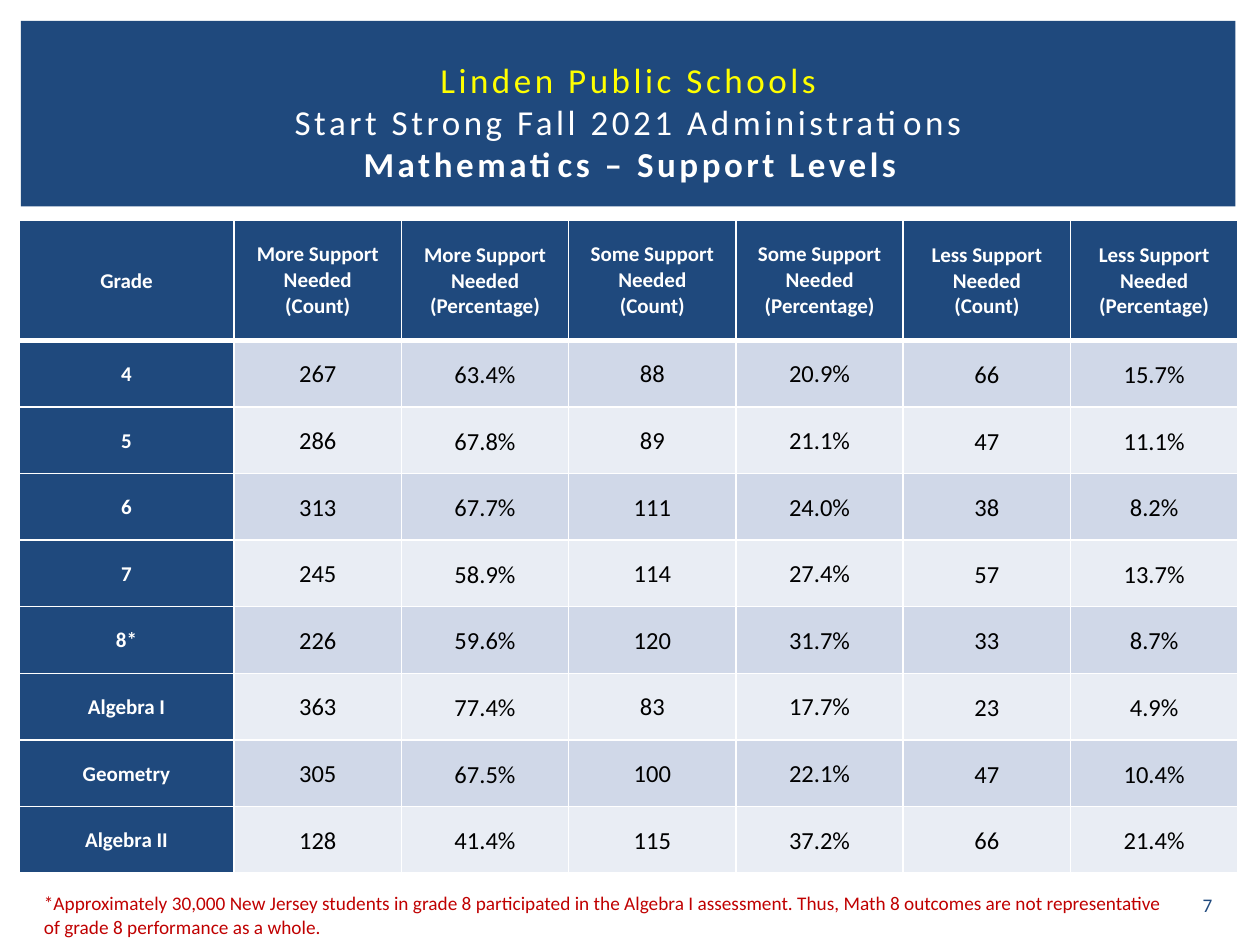
from lxml.etree import SubElement
from pptx import Presentation
from pptx.dml.color import RGBColor
from pptx.enum.shapes import MSO_SHAPE
from pptx.enum.text import MSO_ANCHOR, PP_ALIGN
from pptx.oxml.ns import qn
from pptx.util import Pt

NAVY = RGBColor(0x1F, 0x49, 0x7D)
YELLOW = RGBColor(0xFF, 0xFF, 0x00)
WHITE = RGBColor(0xFF, 0xFF, 0xFF)
BLACK = RGBColor(0x00, 0x00, 0x00)
RED = RGBColor(0xC0, 0x00, 0x00)
BANDS = (RGBColor(0xD0, 0xD8, 0xE8), RGBColor(0xE9, 0xED, 0xF4))

HEADERS = ["Grade"] + [
    f"{level} Support Needed\n({measure})"
    for level in ("More", "Some", "Less")
    for measure in ("Count", "Percentage")
]
RESULTS = [
    ("4", "267", "63.4%", "88", "20.9%", "66", "15.7%"),
    ("5", "286", "67.8%", "89", "21.1%", "47", "11.1%"),
    ("6", "313", "67.7%", "111", "24.0%", "38", "8.2%"),
    ("7", "245", "58.9%", "114", "27.4%", "57", "13.7%"),
    ("8*", "226", "59.6%", "120", "31.7%", "33", "8.7%"),
    ("Algebra I", "363", "77.4%", "83", "17.7%", "23", "4.9%"),
    ("Geometry", "305", "67.5%", "100", "22.1%", "47", "10.4%"),
    ("Algebra II", "128", "41.4%", "115", "37.2%", "66", "21.4%"),
]
WIDE_INSETS = (3.6, 2.16, 3.6, 2.16)
TIGHT_INSETS = (0.72, 0.72, 0.72, 0)
TIGHT_COLUMNS = (2, 5, 6)
FOOTNOTE = (
    "*Approximately 30,000 New Jersey students in grade 8 participated in the "
    "Algebra I assessment. Thus, Math 8 outcomes are not representative of "
    "grade 8 performance as a whole."
)


class SlideBuilder:
    """Draws the elements of one slide in a shared style."""

    font = "Calibri"

    def __init__(self, slide):
        self.slide = slide

    def style(self, r, size, color, bold=False):
        r.font.name = self.font
        r.font.size = Pt(size)
        r.font.bold = bold
        r.font.color.rgb = color

    def banner(self, *box):
        sp = self.slide.shapes.add_shape(MSO_SHAPE.RECTANGLE, *map(Pt, box))
        sp.shadow.inherit = False
        sp.fill.solid()
        sp.fill.fore_color.rgb = NAVY
        sp.line.fill.background()

    def text(self, box, text, size, color, align=PP_ALIGN.LEFT, anchor=MSO_ANCHOR.TOP):
        sp = self.slide.shapes.add_textbox(*map(Pt, box))
        tf = sp.text_frame
        tf.word_wrap = True
        tf.vertical_anchor = anchor
        tf.text = text
        p = tf.paragraphs[0]
        p.alignment = align
        for r in p.runs:
            self.style(r, size, color)
        return p

    def title(self, box, lines):
        text = "\v".join(line for line, _, _ in lines)
        p = self.text(box, text, 20, WHITE, PP_ALIGN.CENTER, MSO_ANCHOR.MIDDLE)
        for r, (_, color, bold) in zip(p.runs, lines):
            self.style(r, 20, color, bold)
            r.font._element.set("spc", "200")

    def border(self, cell, side, width):
        tc_pr = cell._tc.get_or_add_tcPr()
        ln = SubElement(tc_pr, qn(f"a:ln{side}"), w=str(Pt(width)))
        fill = SubElement(ln, qn("a:solidFill"))
        SubElement(fill, qn("a:srgbClr"), val=str(WHITE))

    def cell(self, cell, text, insets, fill, size, color, bold, bottom, top, spaced):
        for side, width in (("L", 1), ("R", 1), ("T", top), ("B", bottom)):
            self.border(cell, side, width)
        cell.fill.solid()
        cell.fill.fore_color.rgb = fill
        cell.vertical_anchor = MSO_ANCHOR.MIDDLE
        (cell.margin_left, cell.margin_top,
         cell.margin_right, cell.margin_bottom) = map(Pt, insets)
        cell.text_frame.text = text
        for p in cell.text_frame.paragraphs:
            p.alignment = PP_ALIGN.CENTER
            if spaced:
                p.line_spacing = 1.06
                p.space_after = Pt(8)
            for r in p.runs:
                self.style(r, size, color, bold)

    def table(self, box, rows, widths, heights):
        shape = self.slide.shapes.add_table(len(rows), len(widths), *map(Pt, box))
        table = shape.table
        table.horz_banding = False
        for column, width in zip(table.columns, widths):
            column.width = Pt(width)
        for row, height in zip(table.rows, heights):
            row.height = Pt(height)
        for i, values in enumerate(rows):
            for j, value in enumerate(values):
                label = i == 0 or j == 0
                self.cell(
                    table.cell(i, j),
                    value,
                    TIGHT_INSETS if j in TIGHT_COLUMNS else WIDE_INSETS,
                    fill=NAVY if label else BANDS[(i - 1) % 2],
                    size=12 if label else 14,
                    color=WHITE if label else BLACK,
                    bold=label,
                    bottom=3 if i == 0 else 1,
                    top=3 if i == 1 else 1,
                    spaced=i > 0 or j == 0,
                )


def main():
    prs = Presentation()
    prs.slide_width, prs.slide_height = Pt(720), Pt(540)
    s = SlideBuilder(prs.slides.add_slide(prs.slide_layouts[6]))
    s.banner(12, 12, 694, 106)
    s.title((30, 28, 660, 83), [
        ("Linden Public Schools", YELLOW, False),
        ("Start Strong Fall 2021 Administrations", WHITE, False),
        ("Mathematics – Support Levels", WHITE, True),
    ])
    s.table(
        (10.8, 126, 696.6, 373),
        [HEADERS] + RESULTS,
        widths=[123] + [95.6] * 6,
        heights=[68.4] + [38.07] * len(RESULTS),
    )
    s.text((18, 506, 655, 34), FOOTNOTE, 11, RED)
    s.text((673, 506, 34, 21.6), "7", 11, NAVY, PP_ALIGN.CENTER, MSO_ANCHOR.MIDDLE)
    prs.save("out.pptx")


if __name__ == "__main__":
    main()
